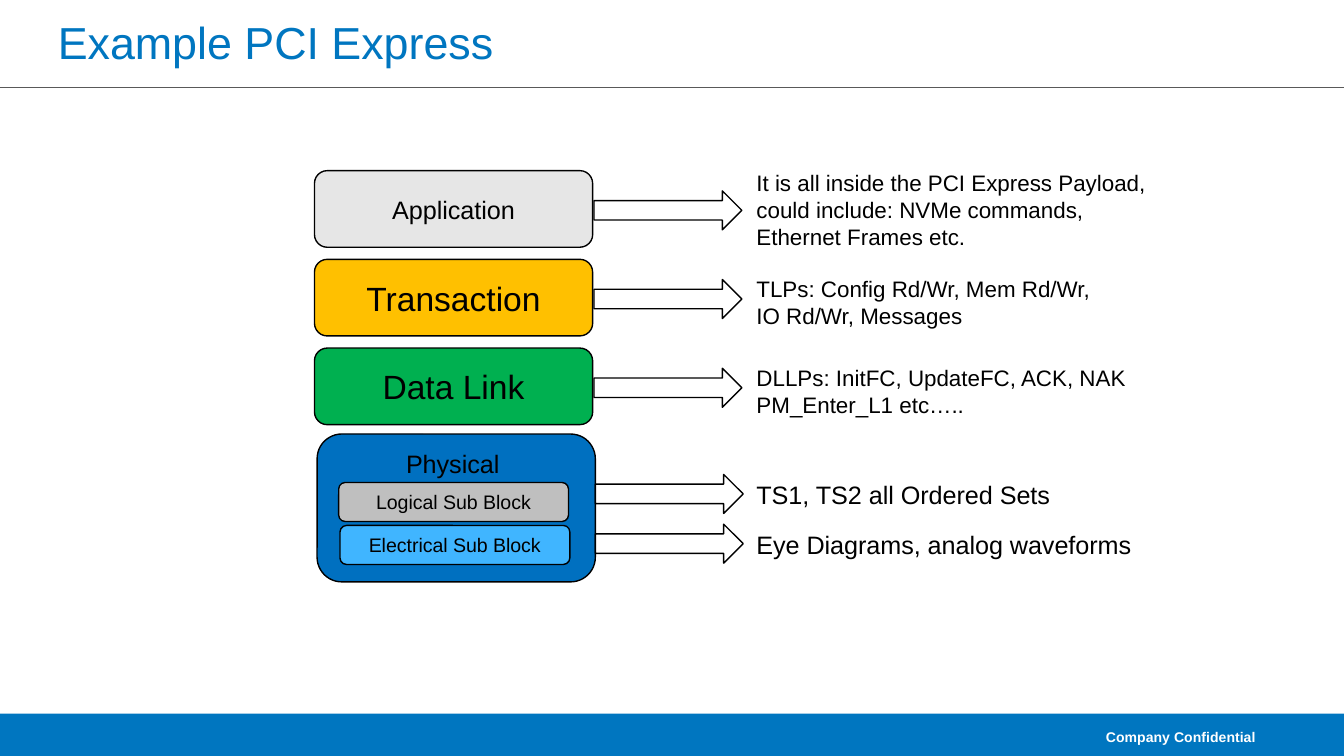
from pptx import Presentation
from pptx.dml.color import RGBColor
from pptx.enum.shapes import MSO_CONNECTOR, MSO_SHAPE
from pptx.enum.text import MSO_ANCHOR, PP_ALIGN
from pptx.oxml.ns import qn
from pptx.util import Inches, Pt
from lxml import etree

RECT, ROUND, ARROW = MSO_SHAPE.RECTANGLE, MSO_SHAPE.ROUNDED_RECTANGLE, MSO_SHAPE.RIGHT_ARROW
STRAIGHT = MSO_CONNECTOR.STRAIGHT
TOP, MIDDLE = MSO_ANCHOR.TOP, MSO_ANCHOR.MIDDLE
LEFT, CENTER, RIGHT = PP_ALIGN.LEFT, PP_ALIGN.CENTER, PP_ALIGN.RIGHT

BLACK = RGBColor(0x00, 0x00, 0x00)
WHITE = RGBColor(0xFF, 0xFF, 0xFF)
BRAND = RGBColor(0x00, 0x76, 0xC0)
RULE = RGBColor(0x59, 0x59, 0x59)
BLUE = RGBColor(0x00, 0x70, 0xC0)
SKY = RGBColor(0x40, 0xB5, 0xFF)
GREEN = RGBColor(0x00, 0xB0, 0x50)
AMBER = RGBColor(0xFF, 0xC0, 0x00)
PALE = RGBColor(0xE6, 0xE6, 0xE6)
GREY = RGBColor(0xBF, 0xBF, 0xBF)

WIDTH = 10
HEIGHT = WIDTH * 9 / 16
STACK_X, STACK_Y, PITCH = 2.34, 1.27, 0.66
LAYER_W, LAYER_H = 2.07, 0.57
BLOCK_X, BLOCK_Y, BLOCK_PITCH = 2.52, 3.59, 0.32
ARROW_W, ARROW_H = 1.1, 0.29
NOTE_X = 5.53

LAYERS = [("Application", 13.5, PALE), ("Transaction", 18, AMBER), ("Data Link", 18, GREEN)]
BLOCKS = [("Logical Sub Block", GREY), ("Electrical Sub Block", SKY)]
ARROWS = [(4.42, STACK_Y + 0.15 + i * PITCH) for i in range(3)] + [(4.43, 3.53), (4.43, 3.9)]
NOTES = [
    (1.21, 3.12, 0.71, 12, ["It is all inside the PCI Express Payload,",
                            "could include: NVMe commands,", "Ethernet Frames etc."]),
    (2.0, 2.76, 0.5, 12, ["TLPs: Config Rd/Wr, Mem Rd/Wr,", "IO Rd/Wr, Messages"]),
    (2.66, 2.98, 0.5, 12, ["DLLPs: InitFC, UpdateFC, ACK, NAK", "PM_Enter_L1 etc….."]),
    (3.52, 2.42, 0.33, 13.5, ["TS1, TS2 all Ordered Sets"]),
    (3.89, 3.03, 0.33, 13.5, ["Eye Diagrams, analog waveforms"]),
]


def write(sp, lines, size, color=BLACK, align=LEFT, anchor=TOP, bold=False, wrap=True):
    """Fill a shape's text frame with formatted paragraphs."""
    tf = sp.text_frame
    tf.word_wrap, tf.vertical_anchor = wrap, anchor
    tf.text = "\n".join(lines)
    for p in tf.paragraphs:
        p.alignment = align
        for r in p.runs:
            for name, value in {"name": "Arial", "size": Pt(size), "bold": bold}.items():
                setattr(r.font, name, value)
            r.font.color.rgb = color


def add_box(s, kind, x, y, w, h, fill, outlined=True):
    """Add a flat filled shape, with a thin black outline if wanted."""
    sp = s.shapes.add_shape(kind, Inches(x), Inches(y), Inches(w), Inches(h))
    sp.shadow.inherit = False
    sp.fill.solid()
    sp.fill.fore_color.rgb = fill
    if outlined:
        sp.line.color.rgb, sp.line.width = BLACK, Pt(0.75)
    else:
        sp.line.fill.background()
    return sp


def add_text(s, x, y, w, h, lines, size, **style):
    """Add a text box."""
    sp = s.shapes.add_textbox(Inches(x), Inches(y), Inches(w), Inches(h))
    write(sp, lines, size, **style)


def add_rule(s, y):
    """Add a thin line across the slide."""
    c = s.shapes.add_connector(STRAIGHT, 0, Inches(y), Inches(WIDTH), Inches(y))
    c.line.color.rgb, c.line.width = RULE, Pt(0.75)
    etree.SubElement(c.element.spPr, qn("a:effectLst"))


def add_title(s, text):
    """Place and format the title placeholder."""
    sp = s.shapes.title
    box = {"left": 0.33, "top": 0.06, "width": 9.42, "height": 0.5}
    for name, value in box.items():
        setattr(sp, name, Inches(value))
    write(sp, [text], 24, color=BRAND, anchor=MIDDLE)


def add_stack(s):
    """Draw the protocol layers and the physical sub blocks."""
    for i, (name, size, fill) in enumerate(LAYERS):
        sp = add_box(s, ROUND, STACK_X, STACK_Y + i * PITCH, LAYER_W, LAYER_H, fill)
        write(sp, [name], size, align=CENTER, anchor=MIDDLE)
    sp = add_box(s, ROUND, STACK_X + 0.02, 3.23, LAYER_W, 1.1, BLUE)
    write(sp, ["Physical "], 13.5, align=CENTER)
    for i, (name, fill) in enumerate(BLOCKS):
        sp = add_box(s, ROUND, BLOCK_X + i * 0.01, BLOCK_Y + i * BLOCK_PITCH, 1.71, 0.29, fill)
        write(sp, [name], 10.5, align=CENTER, anchor=MIDDLE)


def main():
    """Build the slide."""
    prs = Presentation()
    prs.slide_width, prs.slide_height = Inches(WIDTH), Inches(HEIGHT)
    s = prs.slides.add_slide(prs.slide_layouts[5])
    add_box(s, RECT, 0, 5.31, WIDTH, HEIGHT - 5.31, BRAND, outlined=False)
    add_rule(s, 0.65)
    add_title(s, "Example PCI Express")
    add_stack(s)
    for x, y in ARROWS:
        add_box(s, ARROW, x, y, ARROW_W, ARROW_H, WHITE)
    for y, w, h, size, lines in NOTES:
        add_text(s, NOTE_X, y, w, h, lines, size, wrap=False)
    add_text(s, 7.95, 5.35, 1.49, 0.27, ["Company Confidential"], 7.5,
             color=WHITE, align=RIGHT, anchor=MIDDLE, bold=True)
    prs.save("out.pptx")


if __name__ == "__main__":
    main()
